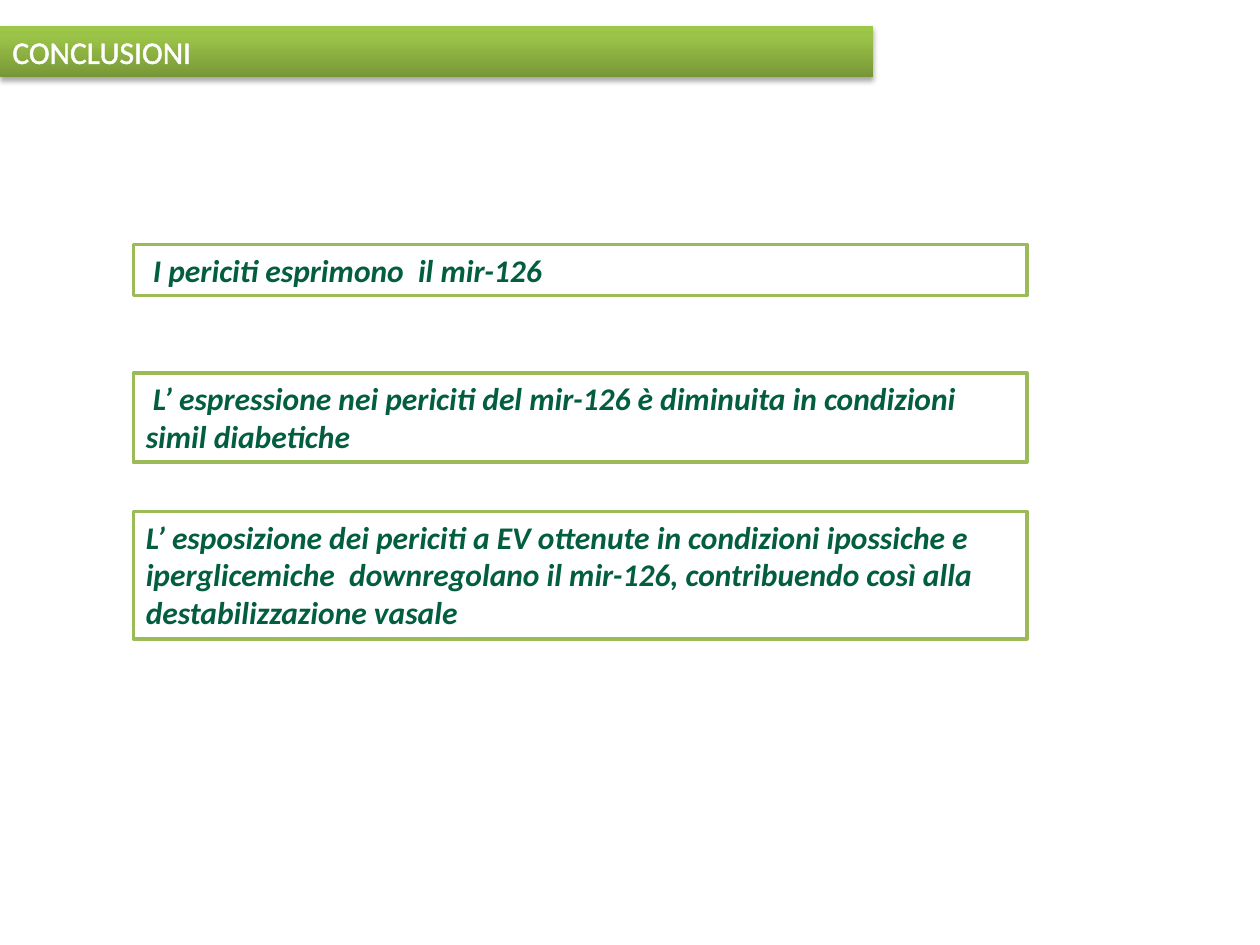
import pptx
import pptx.util
import pptx.dml.color
import pptx.enum.shapes
import pptx.enum.text
import pptx.oxml
import pptx.oxml.ns
import copy

Cm = pptx.util.Cm
Pt = pptx.util.Pt

FONT = "Calibri"
WHITE = "FFFFFF"
LIME = "9BBB59"
DARK_GREEN = "025E3F"
BANNER_STOPS = [("779737", 0), ("9BC348", 0.8), ("9DC746", 1)]

FIRST_LINE_HEIGHT = 1.03
NEXT_LINE_HEIGHT = 0.77

# Each conclusion: top in cm, number of lines, wording
CONCLUSIONS = [
    (4.93, 1, " I periciti esprimono  il mir-126"),
    (7.52, 2, " L’ espressione nei periciti del mir-126 è diminuita in "
              "condizioni simil diabetiche"),
    (10.31, 3, "L’ esposizione dei periciti a EV ottenute in condizioni "
               "ipossiche e iperglicemiche  downregolano il mir-126, "
               "contribuendo così alla destabilizzazione vasale"),
]


def colour(hex_value):
    return pptx.dml.color.RGBColor.from_string(hex_value)


def xml(markup):
    return pptx.oxml.parse_xml(
        markup.replace(" ", f" {pptx.oxml.ns.nsdecls('a')} ", 1))


def add_text_bar(slide, left, top, width, height, text, text_colour):
    """Add a rectangle with left-aligned text and return it with its run."""
    bar = slide.shapes.add_shape(
        pptx.enum.shapes.MSO_SHAPE.RECTANGLE,
        Cm(left), Cm(top), Cm(width), Cm(height))
    bar.shadow.inherit = False
    frame = bar.text_frame
    frame.text = text
    frame.word_wrap = True
    frame.auto_size = pptx.enum.text.MSO_AUTO_SIZE.SHAPE_TO_FIT_TEXT
    frame.vertical_anchor = pptx.enum.text.MSO_ANCHOR.TOP
    paragraph = frame.paragraphs[0]
    paragraph.alignment = pptx.enum.text.PP_ALIGN.LEFT
    run = paragraph.runs[0]
    run.font.name = FONT
    run.font.size = Pt(18)
    run.font.color.rgb = colour(text_colour)
    return bar, run


def add_banner(slide, left, top, width, height, title):
    banner, run = add_text_bar(slide, left, top, width, height, title, WHITE)
    banner.line.fill.background()

    # Gradient from dark at the bottom to light at the top
    banner.fill.gradient()
    banner.fill.gradient_angle = 90
    stop_list = banner._element.spPr.find(".//" + pptx.oxml.ns.qn("a:gsLst"))
    stop_list.append(copy.deepcopy(stop_list[-1]))
    for stop, (hex_value, position) in zip(banner.fill.gradient_stops,
                                           BANNER_STOPS):
        stop.color.rgb = colour(hex_value)
        stop.position = position

    # Soft shadow below the banner
    effects = banner._element.spPr.find(pptx.oxml.ns.qn("a:effectLst"))
    effects.append(xml(
        f'<a:outerShdw blurRad="{Pt(3.1)}" dist="{Pt(1.8)}" dir="5400000" '
        'rotWithShape="0"><a:srgbClr val="000000"><a:alpha val="35000"/>'
        '</a:srgbClr></a:outerShdw>'))

    # White outline of the letters
    run.font._element.insert(0, xml(
        f'<a:ln w="{Pt(1.45)}"><a:solidFill><a:srgbClr val="{WHITE}"/>'
        '</a:solidFill></a:ln>'))


def add_conclusions(slide, left, width):
    for top, lines, text in CONCLUSIONS:
        height = FIRST_LINE_HEIGHT + (lines - 1) * NEXT_LINE_HEIGHT
        box, run = add_text_bar(slide, left, top, width, height, text,
                                DARK_GREEN)
        box.fill.solid()
        box.fill.fore_color.rgb = colour(WHITE)
        box.line.color.rgb = colour(LIME)
        box.line.width = Pt(2)
        run.font.bold = True
        run.font.italic = True


def main():
    deck = pptx.Presentation()
    deck.slide_width = Cm(25.4)
    deck.slide_height = Cm(19.05)
    slide = deck.slides.add_slide(deck.slide_layouts[6])
    add_banner(slide, 0, 0.53, 17.6, FIRST_LINE_HEIGHT, "CONCLUSIONI")
    add_conclusions(slide, 2.69, 18.01)
    deck.save("out.pptx")


if __name__ == "__main__":
    main()
